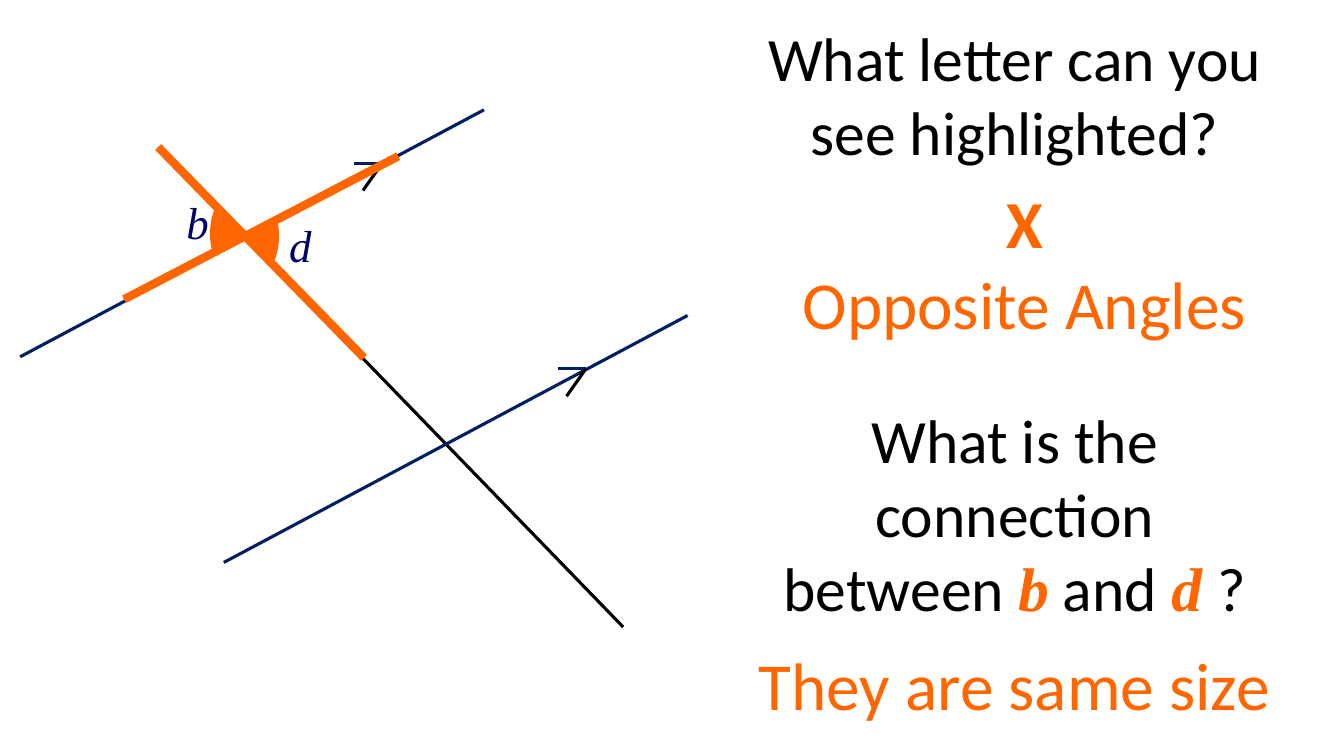
"""Build a slide about opposite angles where a line crosses two parallels."""
import math

from lxml import etree
from pptx import Presentation
from pptx import util as u
from pptx.dml.color import RGBColor
from pptx.enum import text

ORANGE, NAVY, BLACK, LETTER = "FF6600", "002060", "000000", "010066"
SANS, SERIF = "Calibri", "Times New Roman"
MAIN_NS = "{http://schemas.openxmlformats.org/drawingml/2006/main}"


def colour(value):
    """Turn a hex string into a colour."""
    return RGBColor.from_string(value)


def draw_line(slide, origin, start, end, stroke, width=2.25):
    """Draw a straight line between two points measured from the origin."""
    ends = [u.Inches(origin[i] + point[i]) for point in (start, end) for i in (0, 1)]
    line = slide.shapes.add_connector(1, *ends)
    line.line.color.rgb = colour(stroke)
    line.line.width = u.Pt(width)
    etree.SubElement(line._element.spPr, MAIN_NS + "effectLst")


def draw_parallel(slide, left, top):
    """Draw one parallel line with its direction mark in the box at left, top."""
    origin = (left, top)
    draw_line(slide, origin, (0, 2.45), (4.6, 0), NAVY)
    draw_line(slide, origin, (3.31, 0.53), (3.59, 0.53), NAVY)
    draw_line(slide, origin, (3.59, 0.53), (3.4, 0.8), BLACK)


def draw_angle(slide, x, y, side):
    """Fill the angle at a vertex, on the left for side -1 and on the right for 1."""
    arc = []
    for degrees in range(-32, 22, 2):
        turn = math.radians(degrees)
        arc.append((u.Inches(x + side * 0.32 * math.cos(turn)),
                    u.Inches(y - side * 0.48 * math.sin(turn))))
    builder = slide.shapes.build_freeform(u.Inches(x), u.Inches(y), scale=1.0)
    builder.add_line_segments(arc, close=True)
    angle = builder.convert_to_shape()
    angle.shadow.inherit = False
    angle.fill.solid()
    angle.fill.fore_color.rgb = colour(ORANGE)
    angle.line.color.rgb = colour(ORANGE)
    angle.line.width = u.Pt(1)


def write(holder, box, paragraphs, size, align=text.PP_ALIGN.CENTER):
    """Place a text holder and fill it with runs of words, font, colour, bold, italic."""
    holder.left, holder.top, holder.width, holder.height = map(u.Inches, box)
    frame = holder.text_frame
    frame.word_wrap = True
    frame.auto_size = text.MSO_AUTO_SIZE.NONE
    frame.vertical_anchor = text.MSO_ANCHOR.TOP
    for index, runs in enumerate(paragraphs):
        paragraph = frame.add_paragraph() if index else frame.paragraphs[0]
        paragraph.alignment = align
        for words, face, tint, bold, italic in runs:
            run = paragraph.add_run()
            run.text = words
            run.font.name, run.font.size = face, u.Pt(size)
            run.font.bold, run.font.italic = bold, italic
            run.font.color.rgb = colour(tint)


def add_text(slide, box, paragraphs, size, align=text.PP_ALIGN.CENTER):
    """Add a text box and write in it."""
    write(slide.shapes.add_textbox(0, 0, 0, 0), box, paragraphs, size, align)


def plain(words, tint=BLACK, bold=False):
    """Describe a run in the sans font."""
    return words, SANS, tint, bold, False


def angle_name(words):
    """Describe a highlighted angle letter."""
    return words, SERIF, ORANGE, True, True


def draw_diagram(slide, left, top):
    """Draw the crossed parallels and highlighted X in the box at left, top."""
    origin = (left, top)
    draw_line(slide, origin, (1.37, 0.37), (5.98, 5.13), BLACK)
    for letter, x, y in (("b", 1.55, 0.79), ("d", 2.57, 1.02)):
        add_text(slide, (left + x, top + y, 0.41, 0.64),
                 [[(letter, SERIF, LETTER, False, True)]], 32, text.PP_ALIGN.LEFT)
    for step in (0, 1):
        draw_parallel(slide, left + 2.02 * step, top + 2.04 * step)
    draw_line(slide, origin, (1.03, 1.88), (3.75, 0.46), ORANGE, 6)
    draw_line(slide, origin, (1.37, 0.37), (3.41, 2.46), ORANGE, 6)
    draw_angle(slide, left + 2.21, top + 1.23, -1)
    draw_angle(slide, left + 2.24, top + 1.25, 1)


def add_questions(slide, left, top):
    """Place the questions and answers in the column at left, top."""
    write(slide.shapes.title, (left + 0.12, top, 5.35, 1.58),
          [[plain("What letter can you see highlighted?")]], 44)
    add_text(slide, (left + 0.35, top + 1.6, 5.08, 1.72),
             [[plain("X", ORANGE, True)], [plain("Opposite Angles", ORANGE)]], 48)
    add_text(slide, (left + 0.12, top + 3.79, 5.35, 2.32),
             [[plain("What is the connection")],
              [plain("between "), angle_name("b"), plain(" and "),
               angle_name("d "), plain("?")]], 44)
    add_text(slide, (left, top + 6.18, 5.58, 0.91),
             [[plain("They are same size", ORANGE)]], 48)


def main():
    """Build and save the slide."""
    deck = Presentation()
    deck.slide_width, deck.slide_height = u.Inches(13.33), u.Inches(7.5)
    slide = deck.slides.add_slide(deck.slide_layouts[5])
    draw_diagram(slide, 0.2, 1.09)
    add_questions(slide, 7.27, 0.15)
    deck.save("out.pptx")


if __name__ == "__main__":
    main()
